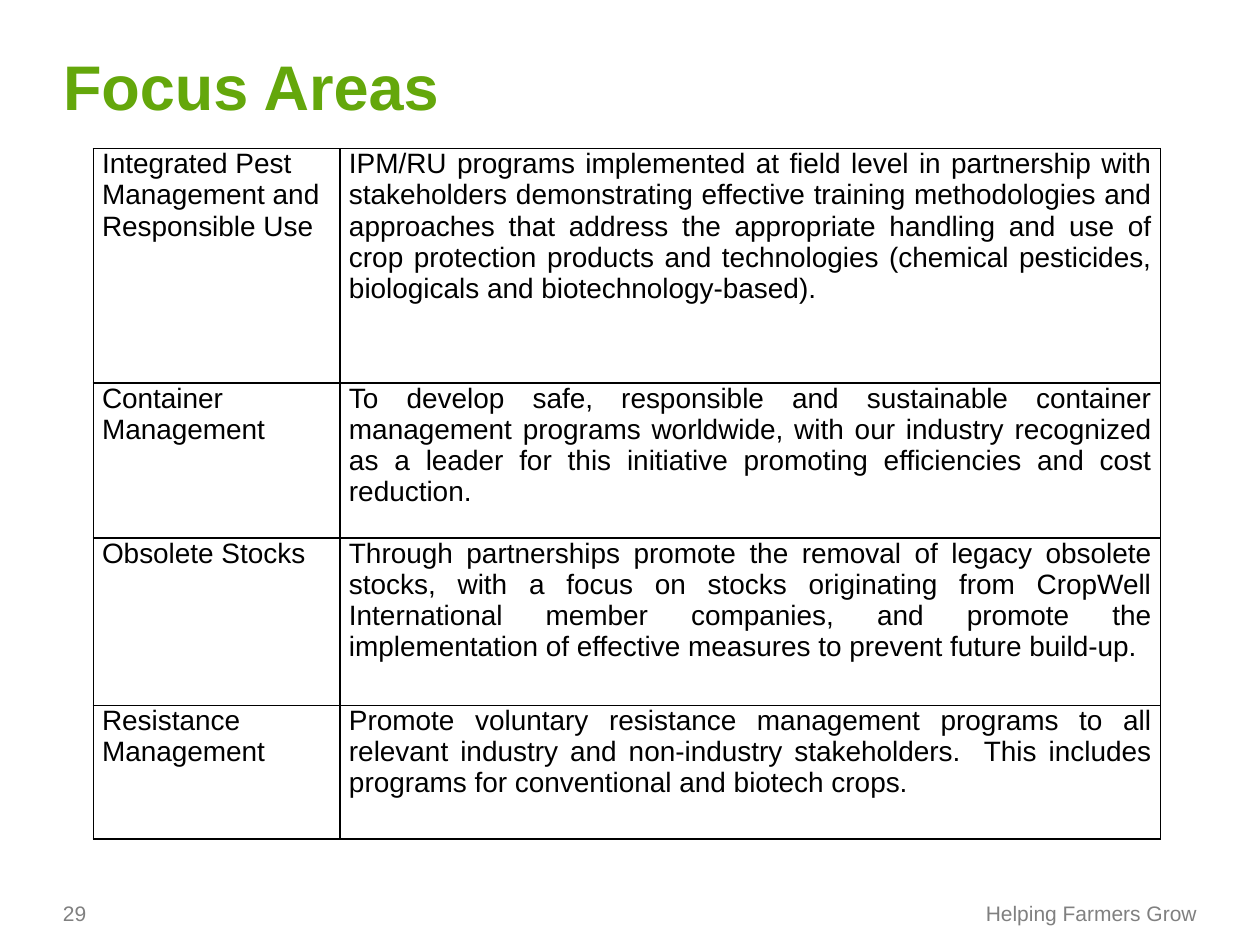
from dataclasses import dataclass

from lxml import etree
from pptx import Presentation
from pptx.dml.color import RGBColor
from pptx.enum.text import MSO_ANCHOR, PP_ALIGN
from pptx.oxml.ns import qn
from pptx.util import Inches, Pt

LEFT, RIGHT, JUSTIFY = PP_ALIGN.LEFT, PP_ALIGN.RIGHT, PP_ALIGN.JUSTIFY
TOP, BOTTOM = MSO_ANCHOR.TOP, MSO_ANCHOR.BOTTOM
TITLE_ONLY = 5


@dataclass(frozen=True)
class Theme:
    font: str = "Arial"
    title_color: str = "64A70B"
    body_color: str = "000000"
    footer_color: str = "808080"
    border_color: str = "000000"
    cell_color: str = "FFFFFF"
    title_size: int = 36
    body_size: int = 16
    footer_size: int = 12
    border_width: int = 1


FOCUS_AREAS = [
    ("Integrated Pest Management and Responsible Use",
     "IPM/RU programs implemented at field level in partnership with stakeholders "
     "demonstrating effective training methodologies and approaches that address the "
     "appropriate handling and use of crop protection products and technologies "
     "(chemical pesticides, biologicals and biotechnology-based)."),
    ("Container Management",
     "To develop safe, responsible and sustainable container management programs "
     "worldwide, with our industry recognized as a leader for this initiative "
     "promoting efficiencies and cost reduction."),
    ("Obsolete Stocks",
     "Through partnerships promote the removal of legacy obsolete stocks, with a focus "
     "on stocks originating from CropWell International member companies, and promote "
     "the implementation of effective measures to prevent future build-up."),
    ("Resistance Management",
     "Promote voluntary resistance management programs to all relevant industry and "
     "non-industry stakeholders.  This includes programs for conventional and biotech "
     "crops."),
]
COLUMN_WIDTHS = (1.96, 6.51)
ROW_HEIGHTS = (1.86, 1.23, 1.33, 1.06)


def set_attributes(target, values):
    for name, value in values.items():
        setattr(target, name, value)


class SlideBuilder:
    def __init__(self, slide, theme):
        self.slide = slide
        self.theme = theme

    def format_text(self, frame, text, size, color, align=LEFT, bold=False):
        frame.text = text
        paragraph = frame.paragraphs[0]
        paragraph.alignment = align
        font = paragraph.runs[0].font
        set_attributes(font, {"name": self.theme.font, "size": Pt(size), "bold": bold})
        font.color.rgb = RGBColor.from_string(color)

    def fit_frame(self, frame):
        """Anchor the text to the bottom of a box without margins."""
        set_attributes(frame, {
            "word_wrap": True, "vertical_anchor": BOTTOM,
            "margin_left": 0, "margin_right": 0, "margin_top": 0, "margin_bottom": 0,
        })

    def title(self, text, left, top, width, height):
        heading = self.slide.shapes.title
        set_attributes(heading, {
            "left": Inches(left), "top": Inches(top),
            "width": Inches(width), "height": Inches(height),
        })
        self.fit_frame(heading.text_frame)
        self.format_text(heading.text_frame, text, self.theme.title_size,
                         self.theme.title_color, bold=True)

    def footer(self, text, left, width, align):
        box = self.slide.shapes.add_textbox(
            Inches(left), Inches(7.14), Inches(width), Inches(0.21))
        self.fit_frame(box.text_frame)
        self.format_text(box.text_frame, text, self.theme.footer_size,
                         self.theme.footer_color, align)

    def border_cell(self, cell):
        """Line all four sides; border elements must precede the cell fill."""
        properties = cell._tc.get_or_add_tcPr()
        for index, side in enumerate(("a:lnL", "a:lnR", "a:lnT", "a:lnB")):
            line = etree.Element(qn(side), w=str(Pt(self.theme.border_width)))
            fill = etree.SubElement(line, qn("a:solidFill"))
            etree.SubElement(fill, qn("a:srgbClr"), val=self.theme.border_color)
            properties.insert(index, line)

    def cell(self, cell, text, align):
        set_attributes(cell, {
            "margin_left": Inches(0.07), "margin_right": Inches(0.07),
            "margin_top": 0, "margin_bottom": 0, "vertical_anchor": TOP,
        })
        cell.fill.solid()
        cell.fill.fore_color.rgb = RGBColor.from_string(self.theme.cell_color)
        self.border_cell(cell)
        self.format_text(cell.text_frame, text, self.theme.body_size,
                         self.theme.body_color, align)

    def table(self, rows, left, top, widths, heights):
        table = self.slide.shapes.add_table(
            len(rows), len(widths), Inches(left), Inches(top),
            Inches(sum(widths)), Inches(sum(heights))).table
        set_attributes(table, {"first_row": False, "horz_banding": False})
        for column, width in zip(table.columns, widths):
            column.width = Inches(width)
        for row, height, texts in zip(table.rows, heights, rows):
            row.height = Inches(height)
            for cell, text, align in zip(row.cells, texts, (LEFT, JUSTIFY)):
                self.cell(cell, text, align)


def main():
    presentation = Presentation()
    presentation.slide_width = Inches(10)
    presentation.slide_height = Inches(7.5)
    slide = presentation.slides.add_slide(presentation.slide_layouts[TITLE_ONLY])
    builder = SlideBuilder(slide, Theme())
    builder.title("Focus Areas", 0.5, 0.37, 6.25, 0.61)
    builder.table(FOCUS_AREAS, 0.74, 1.18, COLUMN_WIDTHS, ROW_HEIGHTS)
    builder.footer("29", 0.5, 1.17, LEFT)
    builder.footer("Helping Farmers Grow", 7.77, 1.73, RIGHT)
    presentation.save("out.pptx")


if __name__ == "__main__":
    main()
